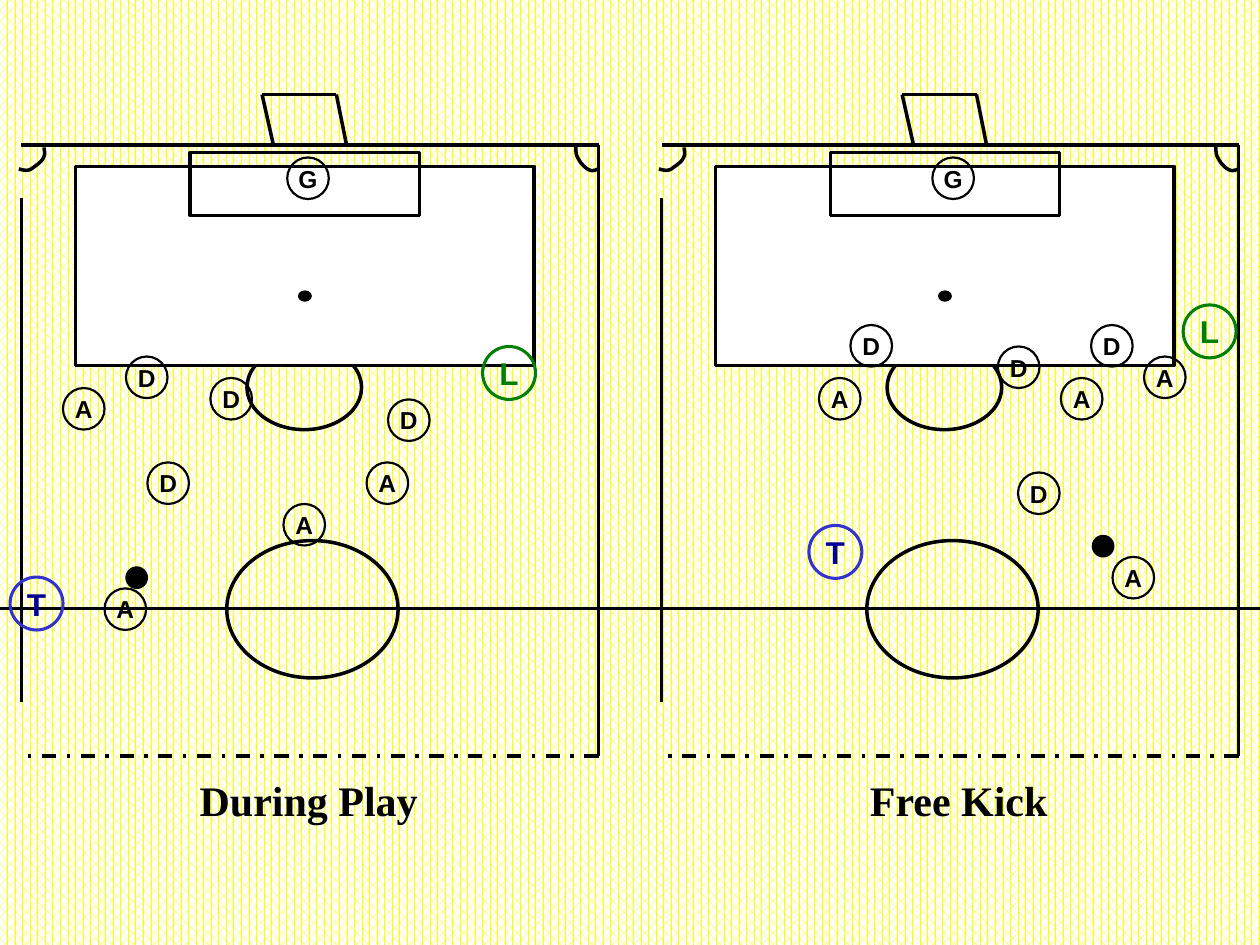
from typing import NamedTuple

from lxml.etree import SubElement
from pptx import Presentation
from pptx.dml.color import RGBColor
from pptx.enum.dml import MSO_LINE, MSO_PATTERN
from pptx.enum.shapes import MSO_CONNECTOR, MSO_SHAPE
from pptx.enum.text import MSO_ANCHOR, PP_ALIGN
from pptx.oxml.ns import qn
from pptx.util import Inches, Pt

BLACK = RGBColor(0, 0, 0)
WHITE = RGBColor(255, 255, 255)
YELLOW = RGBColor(255, 255, 0)
GREEN = RGBColor(0, 128, 0)
BLUE = RGBColor(0x33, 0x33, 0xCC)
NAVY = RGBColor(0, 0, 0x99)


class Style(NamedTuple):
    size: float
    line: RGBColor
    width: float
    color: RGBColor
    points: int


PLAYER = Style(0.33, BLACK, 1.25, BLACK, 14)
STYLES = {
    "L": Style(0.42, GREEN, 1.75, GREEN, 18),
    "T": Style(0.42, BLUE, 1.75, NAVY, 18),
}


class Marker(NamedTuple):
    label: str
    x: float
    y: float


class Scene(NamedTuple):
    title: str
    mid: float      # centre of the caption
    shift: float    # offset of the pitch from the left one
    half: float     # start of the halfway line
    ball: tuple[float, float]
    markers: list[Marker]


SCENES = [
    Scene("During Play", 2.45, 0, 0, (1, 4.5), [
        Marker("A", 0.83, 4.67), Marker("G", 2.28, 1.25),
        Marker("D", 1.67, 3), Marker("D", 3.08, 3.17),
        Marker("A", 2.91, 3.67), Marker("D", 1, 2.83),
        Marker("A", 2.25, 4), Marker("D", 1.17, 3.67),
        Marker("A", 0.5, 3.08), Marker("L", 3.83, 2.75),
        Marker("T", 0.08, 4.58),
    ]),
    Scene("Free Kick", 7.61, 5.08, 4.75, (8.67, 4.25), [
        Marker("A", 8.42, 3), Marker("L", 9.39, 2.42),
        Marker("G", 7.4, 1.25), Marker("D", 7.92, 2.75),
        Marker("A", 8.83, 4.42), Marker("D", 6.75, 2.58),
        Marker("A", 6.5, 3), Marker("A", 9.08, 2.83),
        Marker("D", 8.66, 2.58), Marker("D", 8.08, 3.75),
        Marker("T", 6.42, 4.17),
    ]),
]

# Pitch geometry, measured on the left pitch
LEFT, RIGHT, TOP, BOTTOM, HALFWAY = 0.17, 4.75, 1.15, 6, 4.83
LINES = [
    (LEFT, TOP, RIGHT, TOP),
    (LEFT, 5.57, LEFT, 1.57),
    (RIGHT, TOP, RIGHT, BOTTOM),
    (2.67, 0.75, 2.75, TOP),
    (2.08, 0.75, 2.17, TOP),
    (2.08, 0.75, 2.67, 0.75),
]
CORNERS = [
    [(0.15, 1.34), (0.18, 1.35), (0.22, 1.36), (0.25, 1.34),
     (0.29, 1.31), (0.34, 1.28), (0.35, 1.24),
     (0.36, 1.22), (0.35, 1.19), (0.35, 1.17)],
    [(4.57, 1.16), (4.57, 1.2), (4.57, 1.23), (4.59, 1.26),
     (4.61, 1.3), (4.65, 1.34), (4.68, 1.35),
     (4.7, 1.36), (4.73, 1.35), (4.75, 1.34)],
]


def write(shape, text: str, *, size: int, font: str, color=BLACK) -> None:
    """Centre bold text in a shape, without margins or wrapping."""
    frame = shape.text_frame
    frame.word_wrap = False
    frame.vertical_anchor = MSO_ANCHOR.MIDDLE
    frame.margin_left = frame.margin_right = 0
    frame.margin_top = frame.margin_bottom = 0
    para = frame.paragraphs[0]
    para.alignment = PP_ALIGN.CENTER
    run = para.add_run()
    run.text = text
    run.font.size = Pt(size)
    run.font.name = font
    run.font.bold = True
    run.font.color.rgb = color


def paint(shape, fill=None, line=BLACK, width: float = 2) -> None:
    shape.shadow.inherit = False
    if fill is None:
        shape.fill.background()
    else:
        shape.fill.solid()
        shape.fill.fore_color.rgb = fill
    shape.line.color.rgb = line
    shape.line.width = Pt(width)


def add_line(shapes, x1: float, y1: float, x2: float, y2: float, dash=None) -> None:
    line = shapes.add_connector(
        MSO_CONNECTOR.STRAIGHT, Inches(x1), Inches(y1), Inches(x2), Inches(y2))
    line.line.color.rgb = BLACK
    line.line.width = Pt(2)
    if dash:
        line.line.dash_style = dash
    SubElement(line._element.spPr, qn("a:effectLst"))


def add_form(shapes, kind, x: float, y: float, w: float, h: float, **look):
    shape = shapes.add_shape(kind, Inches(x), Inches(y), Inches(w), Inches(h))
    paint(shape, **look)
    return shape


def trace(knots: list, steps: int = 8) -> list:
    """Sample a chain of cubic curves as points."""
    points = [knots[0]]
    for i in range(0, len(knots) - 1, 3):
        for n in range(1, steps + 1):
            t = n / steps
            u = 1 - t
            parts = (u**3, 3 * u * u * t, 3 * u * t * t, t**3)
            points.append(tuple(
                sum(p * k[axis] for p, k in zip(parts, knots[i:i + 4]))
                for axis in (0, 1)))
    return points


def draw_pitch(shapes, shift: float, half: float) -> None:
    oval, rect = MSO_SHAPE.OVAL, MSO_SHAPE.RECTANGLE
    for x1, y1, x2, y2 in LINES:
        add_line(shapes, x1 + shift, y1, x2 + shift, y2)
    add_line(shapes, half, HALFWAY, half + 5.25, HALFWAY)
    add_form(shapes, oval, 1.8 + shift, 4.29, 1.36, 1.09)
    add_form(shapes, oval, 1.96 + shift, 2.74, 0.91, 0.67)
    add_form(shapes, rect, 0.6 + shift, 1.32, 3.64, 1.58, fill=WHITE)
    add_form(shapes, rect, 1.51 + shift, 1.21, 1.82, 0.5)
    add_form(shapes, oval, 2.37 + shift, 2.31, 0.1, 0.08, fill=BLACK, width=0.75)
    add_line(shapes, RIGHT + shift, BOTTOM, LEFT + shift, BOTTOM, MSO_LINE.DASH_DOT)
    for knots in CORNERS:
        points = [(Inches(x + shift), Inches(y)) for x, y in trace(knots)]
        pen = shapes.build_freeform(*points[0])
        pen.add_line_segments(points[1:], close=False)
        paint(pen.convert_to_shape())


def draw_marker(shapes, mark: Marker) -> None:
    style = STYLES.get(mark.label, PLAYER)
    disc = add_form(shapes, MSO_SHAPE.OVAL, mark.x, mark.y, style.size, style.size,
                    line=style.line, width=style.width)
    write(disc, mark.label, size=style.points, font="Arial", color=style.color)


def draw_scene(shapes, scene: Scene) -> None:
    draw_pitch(shapes, scene.shift, scene.half)
    add_form(shapes, MSO_SHAPE.OVAL, *scene.ball, 0.17, 0.17, fill=BLACK, width=0.75)
    for mark in scene.markers:
        draw_marker(shapes, mark)
    box = shapes.add_textbox(Inches(scene.mid - 0.95), Inches(6.1), Inches(1.9), Inches(0.5))
    write(box, scene.title, size=24, font="Times New Roman")


def main() -> None:
    deck = Presentation()
    deck.slide_width, deck.slide_height = Inches(10), Inches(7.5)
    slide = deck.slides.add_slide(deck.slide_layouts[6])
    back = slide.background.fill
    back.patterned()
    back.pattern = MSO_PATTERN.PERCENT_60
    back.fore_color.rgb = YELLOW
    back.back_color.rgb = WHITE
    for scene in SCENES:
        draw_scene(slide.shapes, scene)
    deck.save("out.pptx")


if __name__ == "__main__":
    main()
